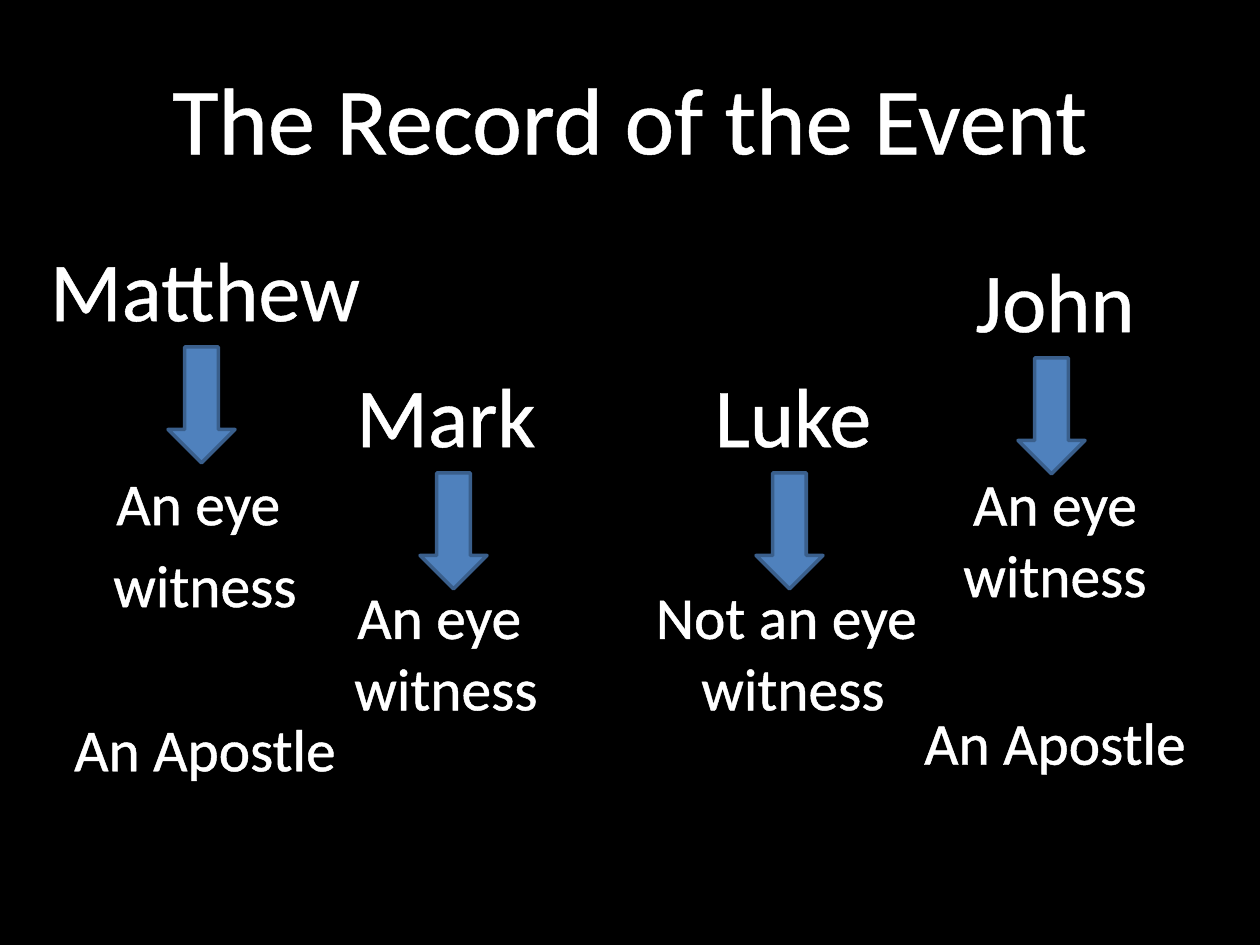
from lxml.etree import SubElement
from pptx import Presentation
from pptx.dml.color import RGBColor
from pptx.enum.shapes import MSO_SHAPE
from pptx.enum.text import MSO_ANCHOR, PP_ALIGN
from pptx.oxml.ns import qn
from pptx.util import Pt

PX = 7257.14
COLORS = {"back": "000000", "text": "FFFFFF", "arrow": "4F81BD", "edge": "3A5F8C"}
FONT = "Calibri"
NAME_SIZE, NOTE_SIZE = 48, 34
COLUMN_W, ARROW_W, ARROW_H, ARROW_DROP = 346, 67, 116, 116

TITLE = "The Record of the Event"
WRITERS = [
    {"name": "Matthew", "left": 32, "top": 231, "height": 609, "arrow": 168,
     "notes": [("An eye ", 73), ("witness", 6), ("An Apostle", 53)]},
    {"name": "Mark", "left": 273, "top": 357, "height": 588, "arrow": 420,
     "notes": [("An eye ", 66), ("witness", 0)]},
    {"name": "Luke", "left": 620, "top": 357, "height": 378, "arrow": 756,
     "notes": [("Not an eye ", 66), ("witness", 0)]},
    {"name": "John", "left": 882, "top": 242, "height": 662, "arrow": 1018,
     "notes": [("An eye", 67), ("witness", 0), ("An Apostle", 55)]},
]


def emu(*lengths):
    return [round(n * PX) for n in lengths]


def color(key):
    return RGBColor.from_string(COLORS[key])


def add_text(slide, lines, box, anchor=MSO_ANCHOR.TOP):
    tf = slide.shapes.add_textbox(*emu(*box)).text_frame
    tf.word_wrap = True
    tf.vertical_anchor = anchor
    for i, (text, size, before) in enumerate(lines):
        p = tf.paragraphs[0] if i == 0 else tf.add_paragraph()
        p.alignment = PP_ALIGN.CENTER
        p.space_before = Pt(before)
        r = p.add_run()
        r.text = text
        r.font.name = FONT
        r.font.size = Pt(size)
        r.font.color.rgb = color("text")
        outline_text(r)


def outline_text(r):
    props = r.font._element
    ln = SubElement(props, qn("a:ln"), w=str(Pt(1.45)))
    fill = SubElement(ln, qn("a:solidFill"))
    SubElement(fill, qn("a:srgbClr"), val=COLORS["text"])
    props.insert(0, ln)


def add_arrow(slide, left, top):
    s = slide.shapes.add_shape(MSO_SHAPE.DOWN_ARROW, *emu(left, top, ARROW_W, ARROW_H))
    s.shadow.inherit = False
    s.fill.solid()
    s.fill.fore_color.rgb = color("arrow")
    s.line.color.rgb = color("edge")
    s.line.width = Pt(2)


def main():
    prs = Presentation()
    prs.slide_width, prs.slide_height = emu(1260, 945)
    slide = prs.slides.add_slide(prs.slide_layouts[6])
    slide.background.fill.solid()
    slide.background.fill.fore_color.rgb = color("back")

    add_text(slide, [(TITLE, 54, 0)], (63, 38, 1134, 157), anchor=MSO_ANCHOR.MIDDLE)
    for w in WRITERS:
        lines = [(w["name"], NAME_SIZE, 0)]
        lines += [(text, NOTE_SIZE, before) for text, before in w["notes"]]
        add_text(slide, lines, (w["left"], w["top"], COLUMN_W, w["height"]))
    for w in WRITERS:
        add_arrow(slide, w["arrow"], w["top"] + ARROW_DROP)
    prs.save("out.pptx")


if __name__ == "__main__":
    main()
